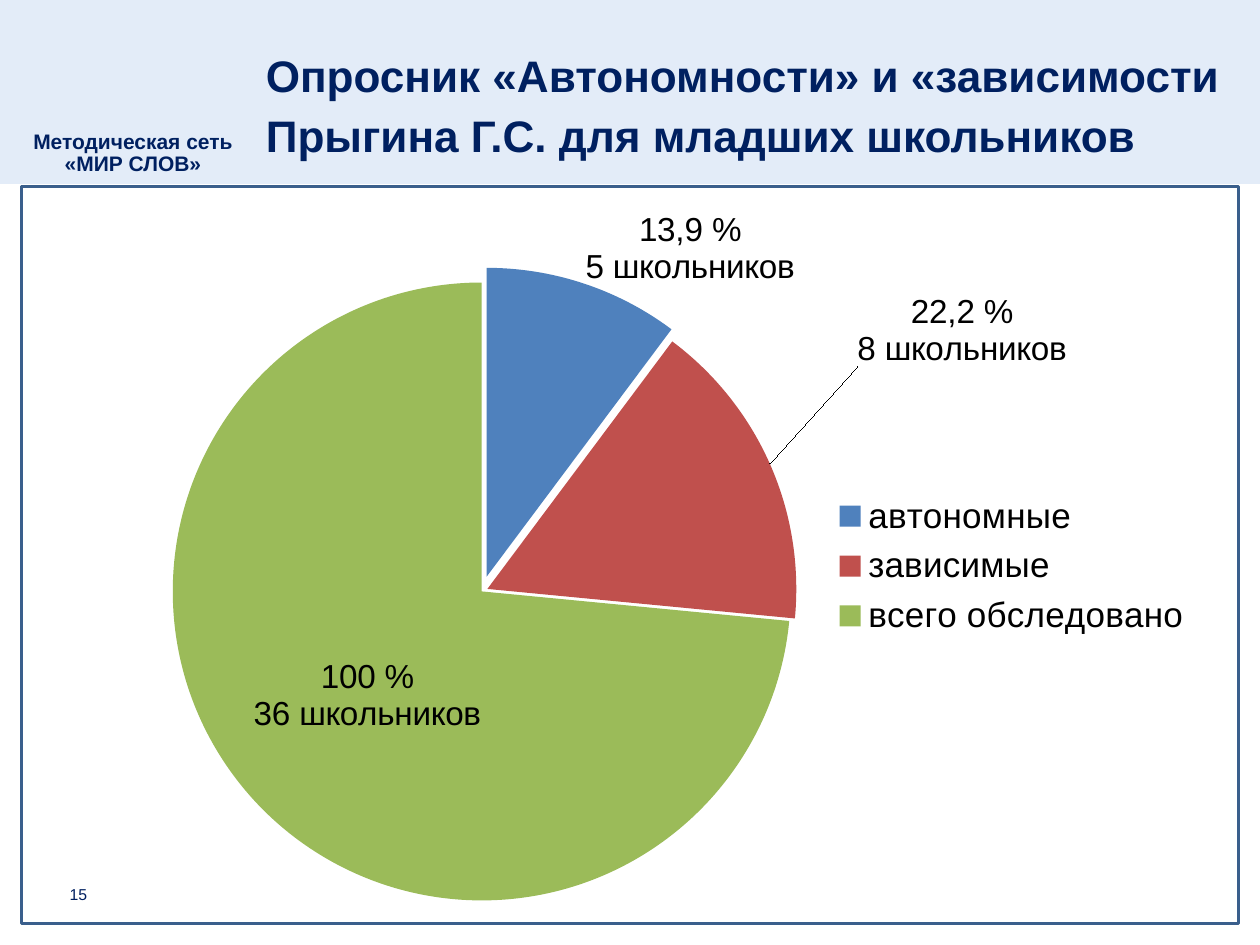
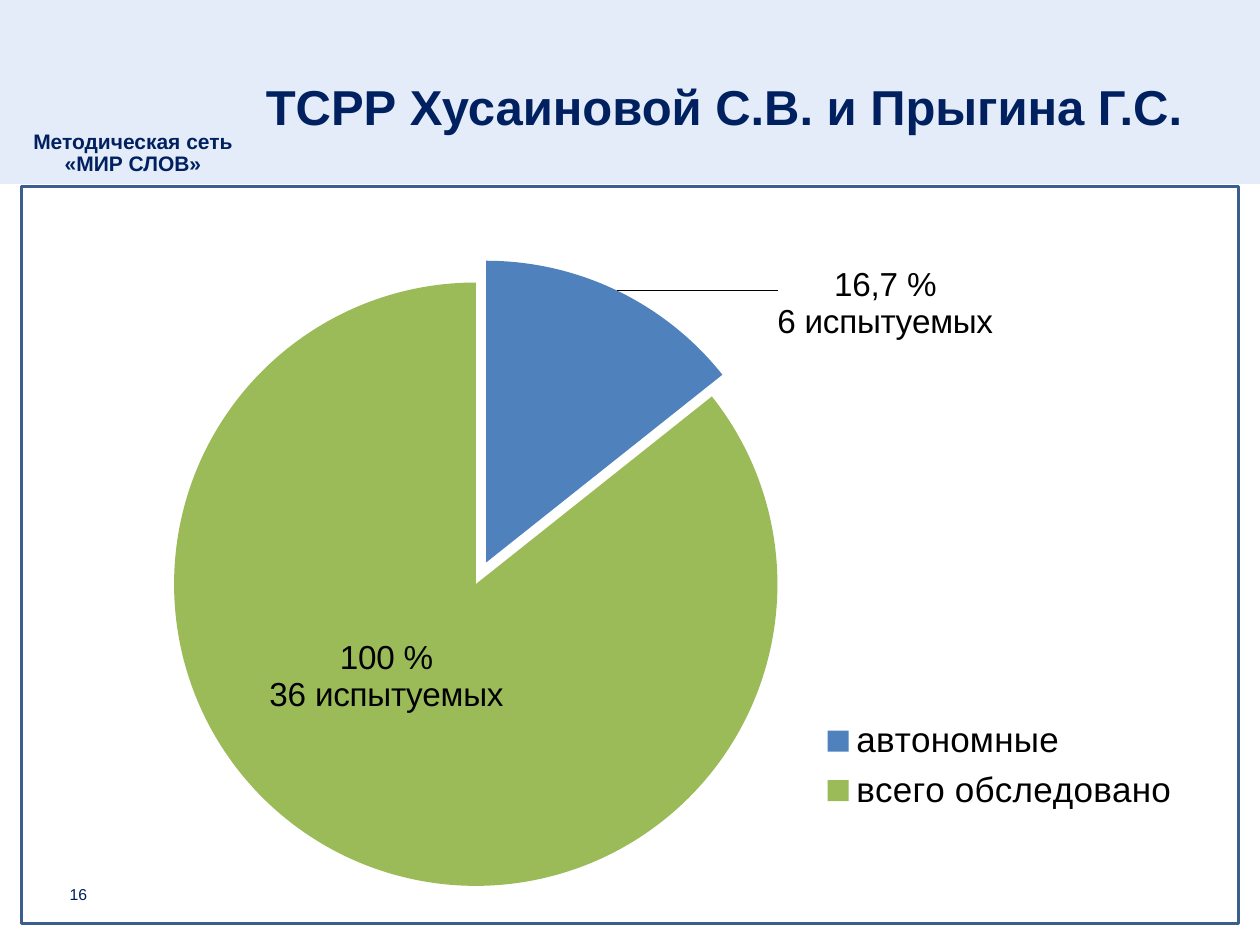
from dataclasses import dataclass

from lxml.etree import SubElement
from pptx import Presentation
from pptx.chart.data import CategoryChartData
from pptx.dml.color import RGBColor
from pptx.enum.chart import XL_CHART_TYPE, XL_LABEL_POSITION, XL_LEGEND_POSITION
from pptx.enum.shapes import MSO_SHAPE
from pptx.enum.text import MSO_ANCHOR, MSO_AUTO_SIZE, PP_ALIGN
from pptx.oxml import parse_xml
from pptx.oxml.ns import nsdecls, qn
from pptx.util import Inches, Pt


@dataclass(frozen=True)
class Theme:
    font: str = "Arial"
    navy: str = "002060"
    band: str = "C6D9F1"
    band_alpha: int = 49
    frame: str = "3A5F8C"
    black: str = "000000"
    blue: str = "4F81BD"
    red: str = "C0504D"
    green: str = "9BBB59"
    caption_size: float = 12
    number_size: float = 9
    legend_size: float = 20
    label_size: float = 19


@dataclass(frozen=True)
class Slice:
    category: str
    value: float
    label: str
    color: str
    explosion: int = 0
    label_shift: tuple = (0, 0)


THEME = Theme()


def area(left, top, width, height):
    return Inches(left), Inches(top), Inches(width), Inches(height)


def style_font(font, size, color, bold=False):
    font.name = THEME.font
    font.size = Pt(size)
    font.bold = bold
    font.color.rgb = RGBColor.from_string(color)


def add_rectangle(page, place):
    box = page.shapes.add_shape(MSO_SHAPE.RECTANGLE, *area(*place))
    box.shadow.inherit = False
    return box


def add_band(page):
    band = add_rectangle(page, (-0.04, 0, 10.06, 1.46))
    band.fill.solid()
    band.fill.fore_color.rgb = RGBColor.from_string(THEME.band)
    band.line.fill.background()
    color = band.element.spPr.find(qn("a:solidFill"))[0]
    SubElement(color, qn("a:alpha"), val=str(THEME.band_alpha * 1000))
    return band


def add_frame(page):
    frame = add_rectangle(page, (0.17, 1.48, 9.66, 5.85))
    frame.fill.background()
    frame.line.color.rgb = RGBColor.from_string(THEME.frame)
    frame.line.width = Pt(2)
    return frame


def add_text(page, place, lines, size, align, anchor, bold=False):
    box = page.shapes.add_textbox(*area(*place))
    frame = box.text_frame
    frame.word_wrap = True
    frame.vertical_anchor = anchor
    frame.text = "\n".join(lines)
    for para in frame.paragraphs:
        para.alignment = align
        style_font(para.font, size, THEME.navy, bold)
    return box


def add_caption(page):
    caption = add_text(page, (0.16, 0.92, 1.85, 0.53), ["Методическая сеть", "«МИР СЛОВ»"],
                       THEME.caption_size, PP_ALIGN.CENTER, MSO_ANCHOR.BOTTOM, True)
    caption.text_frame.margin_left = Inches(0.04)
    for para, spacing in zip(caption.text_frame.paragraphs, (1.04, 0.9)):
        para.line_spacing = spacing
    return caption


def share_on_layout(layout, page):
    for shape in (add_band(page), add_caption(page), add_frame(page)):
        layout.shapes.element.append(shape.element)


def set_title(page, text, size):
    title = page.shapes.title
    title.left, title.top, title.width, title.height = area(2.01, 0.18, 7.84, 1.25)
    frame = title.text_frame
    frame.text = text
    frame.word_wrap = True
    frame.auto_size = MSO_AUTO_SIZE.NONE
    frame.vertical_anchor = MSO_ANCHOR.MIDDLE
    para = frame.paragraphs[0]
    para.alignment = PP_ALIGN.LEFT
    para.line_spacing = 1.14
    para.space_after = Pt(10)
    style_font(para.font, size, THEME.navy, True)


def add_number(page, number):
    add_text(page, (0.2, 6.9, 0.59, 0.4), [str(number)], THEME.number_size,
             PP_ALIGN.RIGHT, MSO_ANCHOR.MIDDLE)


def set_layout(parent, index, **settings):
    for old in parent.findall(qn("c:layout")):
        parent.remove(old)
    layout = parse_xml(f"<c:layout {nsdecls('c')}><c:manualLayout/></c:layout>")
    for name, value in settings.items():
        SubElement(layout[0], qn(f"c:{name}"), val=str(value))
    parent.insert(index, layout)


def set_area_layout(parent, index, place, **target):
    left, top, width, height = place
    set_layout(parent, index, **target, xMode="edge", yMode="edge",
               x=left, y=top, w=width, h=height)


def style_slice(point, part):
    point.format.fill.solid()
    point.format.fill.fore_color.rgb = RGBColor.from_string(part.color)
    point.format.line.fill.background()
    frame = point.data_label.text_frame
    frame.text = part.label
    for para in frame.paragraphs:
        style_font(para.font, THEME.label_size, THEME.black)
    point.data_label.position = XL_LABEL_POSITION.CENTER


def add_pie(page, slices, plot_place, legend_place):
    data = CategoryChartData(number_format="0.0%")
    data.categories = [part.category for part in slices]
    data.add_series("Series 1", [part.value for part in slices])
    chart = page.shapes.add_chart(
        XL_CHART_TYPE.PIE, *area(0.28, 1.55, 9.45, 5.77), data).chart
    chart.has_title = False
    style_font(chart.font, THEME.legend_size, THEME.black)
    chart.has_legend = True
    chart.legend.position = XL_LEGEND_POSITION.RIGHT
    chart.legend.include_in_layout = False
    chart.plots[0].vary_by_categories = True

    series = chart.plots[0].series[0]
    labels = series.data_labels
    labels.show_value = True
    labels.number_format = "0.0%"
    labels.number_format_is_linked = False
    labels.position = XL_LABEL_POSITION.CENTER
    style_font(labels.font, THEME.label_size, THEME.black)
    for index, part in enumerate(slices):
        style_slice(series.points[index], part)

    root = chart.element
    for part, point, label in zip(slices, root.xpath(".//c:dPt"), root.xpath(".//c:dLbl")):
        if part.explosion:
            explosion = parse_xml(f'<c:explosion {nsdecls("c")} val="{part.explosion}"/>')
            point.find(qn("c:spPr")).addprevious(explosion)
        if any(part.label_shift):
            x, y = part.label_shift
            set_layout(label, 1, x=x, y=y)
    set_area_layout(root.xpath(".//c:plotArea")[0], 0, plot_place, layoutTarget="inner")
    set_area_layout(root.xpath(".//c:legend")[0], 1, legend_place)


def add_pie_page(deck, number, title, title_size, slices, plot_place, legend_place):
    page = deck.slides.add_slide(deck.slide_layouts[5])
    set_title(page, title, title_size)
    add_number(page, number)
    add_pie(page, slices, plot_place, legend_place)
    return page


def main():
    deck = Presentation()
    deck.slide_width, deck.slide_height = Inches(10), Inches(7.5)

    first_page = add_pie_page(
        deck, 15,
        "Опросник «Автономности» и «зависимости Прыгина Г.С. для младших школьников", 25.2,
        [Slice("автономные", 0.139, "13,9 %\n5 школьников", THEME.blue, 5, (0.13, -0.25)),
         Slice("зависимые", 0.222, "22,2 %\n8 школьников", THEME.red, 2, (0.28, -0.27)),
         Slice("всего обследовано", 1, "100 %\n36 школьников", THEME.green)],
        (0.11, 0.12, 0.53, 0.85), (0.67, 0.4, 0.3, 0.22))
    share_on_layout(deck.slide_layouts[5], first_page)

    add_pie_page(
        deck, 16, "ТСРР Хусаиновой С.В. и Прыгина Г.С.", 28,
        [Slice("автономные", 0.167, "16,7 %\n6 испытуемых", THEME.blue, 8, (0.28, -0.17)),
         Slice("всего обследовано", 1, "100 %\n36 испытуемых", THEME.green, 0, (-0.02, -0.06))],
        (0.11, 0.12, 0.52, 0.83), (0.66, 0.71, 0.3, 0.15))

    deck.save("out.pptx")


if __name__ == "__main__":
    main()
